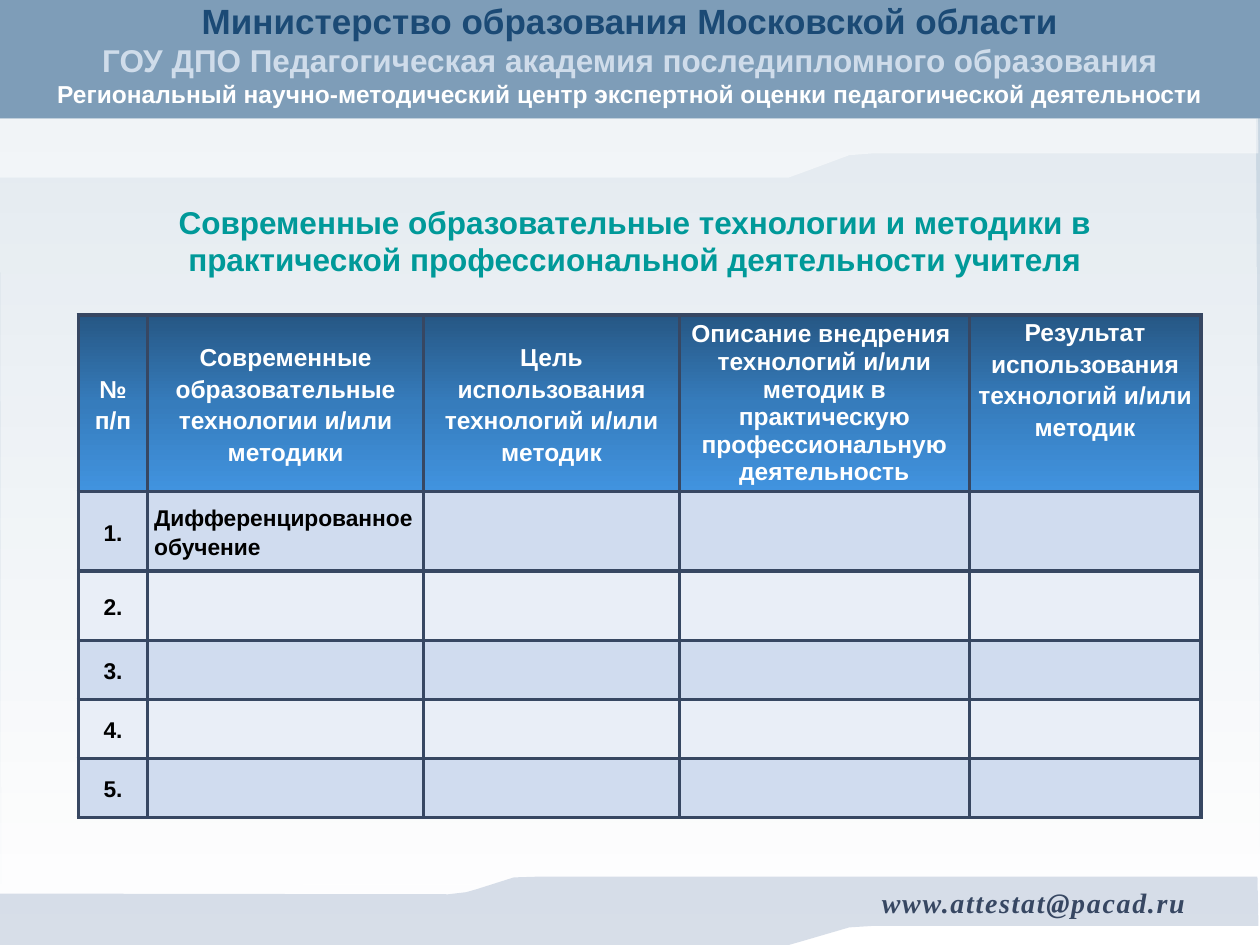
from lxml import etree
from pptx import Presentation
from pptx.dml.color import RGBColor
from pptx.enum.text import MSO_ANCHOR, PP_ALIGN
from pptx.oxml.ns import qn
from pptx.util import Cm, Pt

CENTER, LEFT, RIGHT = PP_ALIGN.CENTER, PP_ALIGN.LEFT, PP_ALIGN.RIGHT
TOP, MIDDLE = MSO_ANCHOR.TOP, MSO_ANCHOR.MIDDLE

WHITE = RGBColor(0xFF, 0xFF, 0xFF)
BLACK = RGBColor(0, 0, 0)
SKY = RGBColor(0xC1, 0xD0, 0xDD)
BAND = RGBColor(0x7E, 0x9D, 0xB8)
NAVY = RGBColor(0x1B, 0x4A, 0x75)
PALE = RGBColor(0xCF, 0xDC, 0xEA)
TEAL = RGBColor(0x00, 0x99, 0x99)
SLATE = RGBColor(0x37, 0x47, 0x62)
WAVE_BLUE = RGBColor(0xB0, 0xBE, 0xD3)
ROW_DARK = RGBColor(0xD0, 0xDC, 0xEF)
ROW_LIGHT = RGBColor(0xE9, 0xEE, 0xF7)
HEADER_STOPS = [(0, RGBColor(0x26, 0x57, 0x84)), (50, RGBColor(0x36, 0x7C, 0xBC)),
                (100, RGBColor(0x41, 0x93, 0xDF))]

# Content
MASTHEAD = ("Министерство образования Московской области\v"
            "ГОУ ДПО Педагогическая академия последипломного образования\n"
            "Региональный научно-методический центр экспертной оценки педагогической деятельности")
MASTHEAD_STYLES = [(20, NAVY), (18, PALE), (14, WHITE)]
TITLE = ("Современные образовательные технологии и методики в "
         "практической профессиональной деятельности учителя")
ADDRESS = "www.attestat@pacad.ru"

# Header cells: text, anchor, line spacing
HEADERS = [
    ("№\nп/п", MIDDLE, 1.15),
    ("Современные образовательные технологии и/или методики", MIDDLE, 1.15),
    ("Цель использования технологий и/или методик", MIDDLE, 1.15),
    ("Описание внедрения \nтехнологий и/или методик в практическую "
     "профессиональную деятельность", MIDDLE, 1.0),
    ("Результат использования технологий и/или методик", TOP, 1.15),
]
TECHNOLOGIES = ["Дифференцированное обучение", "", "", "", ""]
COLUMN_WIDTHS = [1.4, 5.56, 5.16, 5.84, 4.67]
ROW_HEIGHTS = [3.56, 1.6, 1.4, 1.19, 1.19, 1.19]

# Outlines in cm; the depth of a wave is a share of its height
PANEL = [(0.03, 17.83), (25.4, 17.86), (25.32, 2.39), (0, 2.39)]
WAVE = [(25.35, 0.03), (10.82, 0.03), (10.36, 0.04), (9.6, 0.21), (9.4, 0.25),
        (9.04, 0.28), (0, 0.27), (0, 1), (15.9, 1), (16.2, 0.94), (17.12, 0.75),
        (17.58, 0.73), (25.37, 0.73)]


def set_gradient(fill, owner, stops):
    """Fill from top to bottom with any number of (percent, colour) stops."""
    fill.gradient()
    fill.gradient_angle = 270
    stop_list = owner.find(".//" + qn("a:gsLst"))
    for stop in list(stop_list):
        stop_list.remove(stop)
    for percent, color in stops:
        stop = etree.SubElement(stop_list, qn("a:gs"), pos=str(percent * 1000))
        etree.SubElement(stop, qn("a:srgbClr"), val=str(color))


def set_borders(cell, color, width):
    properties = cell._tc.get_or_add_tcPr()
    for side in ("lnL", "lnR", "lnT", "lnB"):
        line = etree.SubElement(properties, qn("a:" + side), w=str(width))
        solid = etree.SubElement(line, qn("a:solidFill"))
        etree.SubElement(solid, qn("a:srgbClr"), val=str(color))


def style_run(run, size, color, font="Arial"):
    run.font.name, run.font.size = font, Pt(size)
    run.font.bold = True
    run.font.color.rgb = color


def add_translucent(slide, points, color):
    corners = [(Cm(x), Cm(y)) for x, y in points]
    builder = slide.shapes.build_freeform(*corners[0], scale=1.0)
    builder.add_line_segments(corners[1:], close=True)
    shape = builder.convert_to_shape()
    shape.shadow.inherit = False
    shape.fill.solid()
    shape.fill.fore_color.rgb = color
    shape.line.fill.background()
    color_node = shape._element.spPr.find(qn("a:solidFill"))[0]
    etree.SubElement(color_node, qn("a:alpha"), val="50000")


def add_wave(slide, top, height, color):
    add_translucent(slide, [(x, top + depth * height) for x, depth in WAVE], color)


def add_text(slide, box, text, align, anchor, styles, font="Arial"):
    frame = slide.shapes.add_textbox(*map(Cm, box)).text_frame
    frame.word_wrap = True
    frame.vertical_anchor = anchor
    frame.text = text
    for paragraph in frame.paragraphs:
        paragraph.alignment = align
    runs = [run for paragraph in frame.paragraphs for run in paragraph.runs]
    for run, (size, color) in zip(runs, styles):
        style_run(run, size, color, font)
    return runs


def fill_cell(cell, text, size, color, align, anchor, spacing, after):
    cell.vertical_anchor = anchor
    cell.margin_left = cell.margin_right = Cm(0.13)
    cell.margin_top = cell.margin_bottom = 0
    cell.text = text
    for paragraph in cell.text_frame.paragraphs:
        paragraph.alignment = align
        paragraph.line_spacing = spacing
        paragraph.space_after = Pt(after)
        for run in paragraph.runs:
            style_run(run, size, color)


def add_technology_table(slide):
    table = slide.shapes.add_table(
        len(ROW_HEIGHTS), len(COLUMN_WIDTHS), Cm(1.58), Cm(6.35),
        Cm(sum(COLUMN_WIDTHS)), Cm(sum(ROW_HEIGHTS))).table
    table.first_row = table.horz_banding = False
    for column, width in zip(table.columns, COLUMN_WIDTHS):
        column.width = Cm(width)
    for row, height in zip(table.rows, ROW_HEIGHTS):
        row.height = Cm(height)
    for cell in table.iter_cells():
        set_borders(cell, SLATE, Pt(2.25))

    for column, (text, anchor, spacing) in enumerate(HEADERS):
        cell = table.cell(0, column)
        set_gradient(cell.fill, cell._tc, HEADER_STOPS)
        fill_cell(cell, text, 14, WHITE, CENTER, anchor, spacing, 0)

    for number, technology in enumerate(TECHNOLOGIES, start=1):
        for cell in table.rows[number].cells:
            cell.fill.solid()
            cell.fill.fore_color.rgb = ROW_DARK if number % 2 else ROW_LIGHT
        fill_cell(table.cell(number, 0), f"{number}.", 13, BLACK, CENTER, MIDDLE, 1.15, 12)
        if technology:
            fill_cell(table.cell(number, 1), technology, 13, BLACK, LEFT, MIDDLE, 1.15, 12)


def main():
    deck = Presentation()
    deck.slide_width, deck.slide_height = Cm(25.4), Cm(19.05)
    slide = deck.slides.add_slide(deck.slide_layouts[6])

    # Backdrop
    set_gradient(slide.background.fill, slide.element, [(0, SKY), (100, WHITE)])
    add_translucent(slide, PANEL, WHITE)
    add_wave(slide, 1.78, 1.8, WHITE)

    # Masthead
    band = slide.shapes.add_shape(1, 0, 0, deck.slide_width, Cm(2.39))
    band.shadow.inherit = False
    band.fill.solid()
    band.fill.fore_color.rgb = BAND
    band.line.fill.background()
    add_text(slide, (0, 0, 25.4, 2.18), MASTHEAD, CENTER, MIDDLE, MASTHEAD_STYLES)

    # Footer
    add_wave(slide, 17.63, 1.42, WAVE_BLUE)
    address, = add_text(slide, (15.4, 17.7, 8.75, 1), ADDRESS, RIGHT, MIDDLE,
                        [(16, SLATE)], "Times New Roman")
    address.font.italic = True
    address._r.get_or_add_rPr().set("spc", "100")

    # Title and table
    add_text(slide, (1.98, 3.96, 21.64, 1.8), TITLE, CENTER, TOP, [(18, TEAL)])
    add_technology_table(slide)

    deck.save("out.pptx")


if __name__ == "__main__":
    main()
